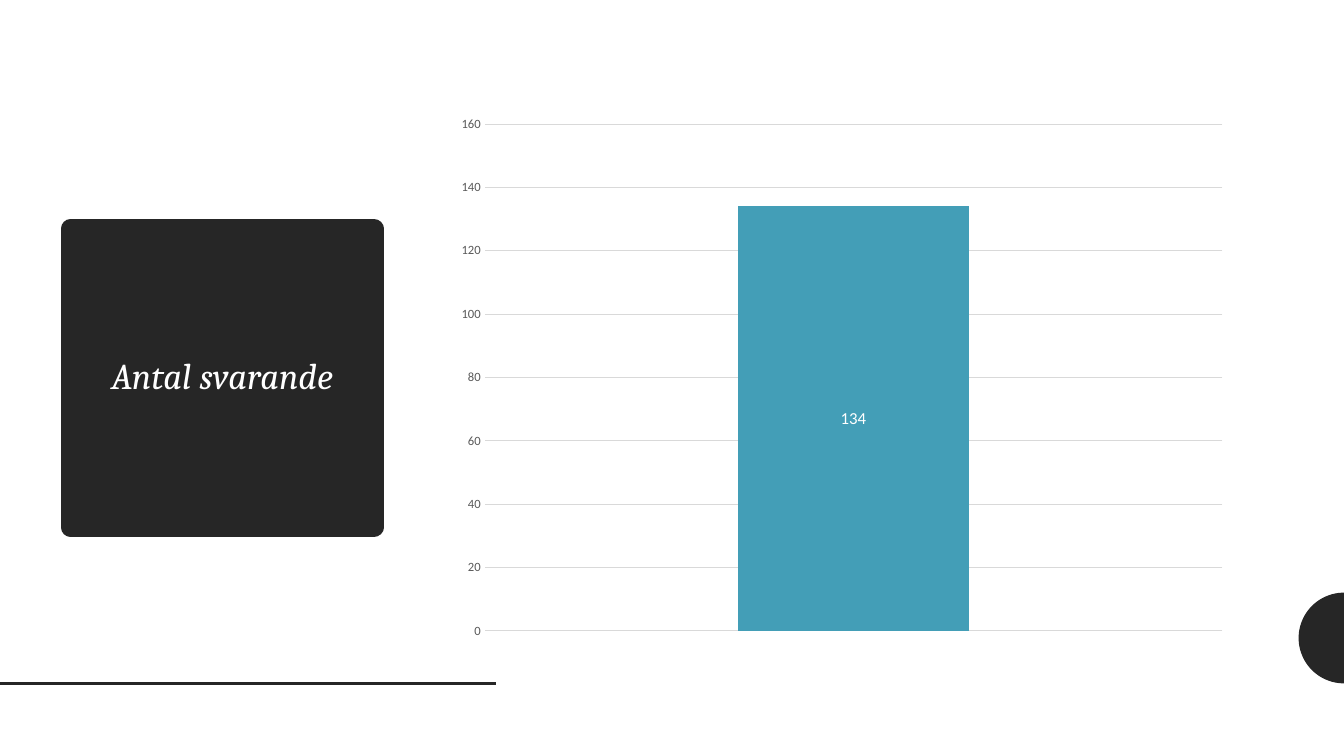
from math import cos, pi, sin

from lxml.etree import SubElement
from pptx import Presentation
from pptx.chart.data import CategoryChartData
from pptx.dml.color import RGBColor
from pptx.enum.chart import XL_CHART_TYPE, XL_LABEL_POSITION, XL_TICK_MARK
from pptx.enum.shapes import MSO_CONNECTOR
from pptx.enum.text import MSO_ANCHOR, PP_ALIGN
from pptx.oxml.ns import qn
from pptx.util import Inches, Pt

WIDTH, HEIGHT = Inches(13.33), Inches(7.5)
DARK, WHITE = "262626", "FFFFFF"


def paint(part, color):
    """Give a fill a solid colour."""
    part.solid()
    part.fore_color.rgb = RGBColor.from_string(color)


def style(font, name, size, color):
    font.name, font.size = name, Pt(size)
    paint(font.fill, color)


deck = Presentation()
deck.slide_width, deck.slide_height = WIDTH, HEIGHT
slide = deck.slides.add_slide(deck.slide_layouts[5])
shapes = slide.shapes
paint(slide.background.fill, WHITE)

# Half disc at the right edge, its foot level with the rule
base, radius, steps = Inches(6.78), Inches(0.45), 48
arc = [
    (round(WIDTH - radius * sin(pi * i / steps)),
     round(base - radius + radius * cos(pi * i / steps)))
    for i in range(steps + 1)
]
pen = shapes.build_freeform(*arc[0])
pen.add_line_segments(arc[1:], close=True)
disc = pen.convert_to_shape()
disc.shadow.inherit = False
paint(disc.fill, DARK)
disc.line.fill.background()

rule = shapes.add_connector(MSO_CONNECTOR.STRAIGHT, 0, base, Inches(4.92), base)
paint(rule.line.fill, DARK)
rule.line.width = Pt(2)
SubElement(rule._element.spPr, qn("a:effectLst"))

# Title tile: the thick line rounds its corners
title = shapes.title
title.left, title.top = Inches(0.7), Inches(2.27)
title.width, title.height = Inches(3.01), Inches(2.96)
paint(title.fill, DARK)
paint(title.line.fill, DARK)
title.line.width = Pt(13.75)
SubElement(title.line._ln, qn("a:round"))
frame = title.text_frame
frame.text = "Antal svarande"
frame.word_wrap = True
frame.vertical_anchor = MSO_ANCHOR.MIDDLE
head = frame.paragraphs[0]
head.alignment, head.line_spacing = PP_ALIGN.CENTER, 0.9
style(head.font, "Cambria", 26, WHITE)
head.font.italic = True

data = CategoryChartData()
data.categories = ["1"]
data.add_series("Series 1", [134])
chart = shapes.add_chart(
    XL_CHART_TYPE.COLUMN_CLUSTERED,
    Inches(4.42), Inches(1.05), Inches(7.86), Inches(5.39), data).chart
chart.has_title = chart.has_legend = False
style(chart.font, "Calibri", 10, "000000")

chart.category_axis.visible = False
axis = chart.value_axis
axis.minimum_scale, axis.maximum_scale, axis.major_unit = 0, 160, 20
axis.major_tick_mark = axis.minor_tick_mark = XL_TICK_MARK.NONE
axis.format.line.fill.background()
style(axis.tick_labels.font, "Calibri", 9, "595959")
grid = axis.major_gridlines.format.line
paint(grid.fill, "D9D9D9")
grid.width = Pt(0.75)

plot = chart.plots[0]
plot.vary_by_categories = False
plot.gap_width, plot.overlap = 219, -27
bars = plot.series[0]
paint(bars.format.fill, "439EB7")
labels = bars.data_labels
labels.show_value = True
labels.position = XL_LABEL_POSITION.CENTER
style(labels.font, "Calibri", 12, WHITE)

deck.save("out.pptx")
